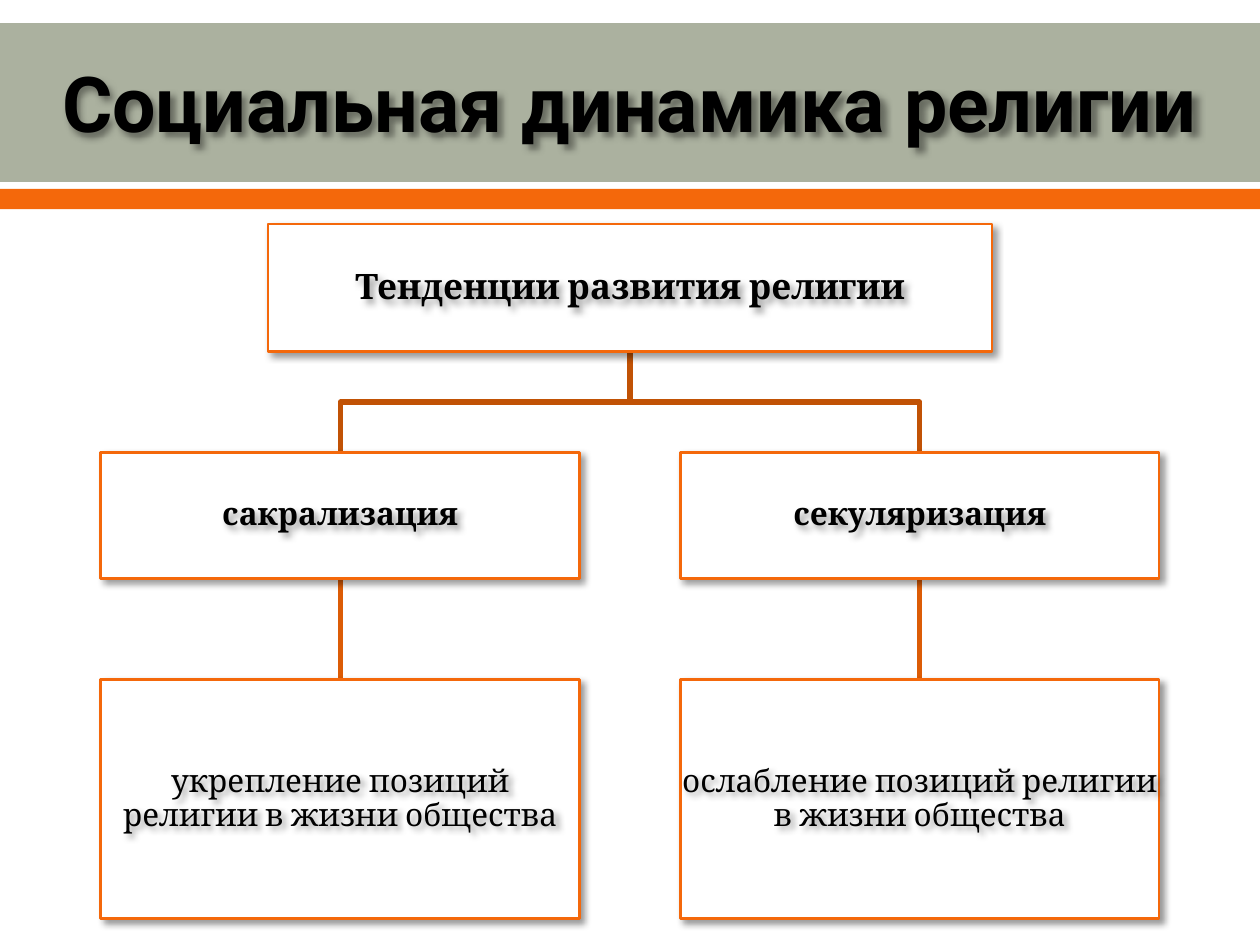
import lxml.etree
import pptx
import pptx.dml.color
import pptx.enum.shapes
import pptx.enum.text
import pptx.oxml.ns
import pptx.util

Pt = pptx.util.Pt
RGBColor = pptx.dml.color.RGBColor
MSO_SHAPE = pptx.enum.shapes.MSO_SHAPE
qn = pptx.oxml.ns.qn

BLACK = RGBColor(0x00, 0x00, 0x00)
WHITE = RGBColor(0xFF, 0xFF, 0xFF)
SAGE = RGBColor(0xAB, 0xB1, 0x9F)
ORANGE = RGBColor(0xF4, 0x68, 0x0B)
UPPER_LINK = RGBColor(0xC1, 0x52, 0x05)
LOWER_LINK = RGBColor(0xDC, 0x5C, 0x06)

PAGE_WIDTH, PAGE_HEIGHT = 720, 540
CENTRE = PAGE_WIDTH / 2
ROOT_WIDTH, ROOT_TOP, ROOT_HEIGHT = 413.6, 128, 73
BRANCH_WIDTH, BRANCH_TOP, BRANCH_HEIGHT = 273.6, 258.6, 72
DETAIL_TOP, DETAIL_HEIGHT = 388.2, 136.8
BRANCH_OFFSET = 165.6
BRANCHES = [
    (CENTRE - BRANCH_OFFSET, "сакрализация",
     "укрепление позиций религии в жизни общества"),
    (CENTRE + BRANCH_OFFSET, "секуляризация",
     "ослабление позиций религии в жизни общества"),
]


class SlideBuilder:
    title_font = "Roboto"
    body_font = "Cambria"
    link_width = 3
    border_width = 1.5

    def __init__(self, page):
        self.page = page
        self.shapes = page.shapes

    def cast_shadow(self, shape):
        """Give the shape a soft shadow towards the lower right."""
        shape.shadow.inherit = False
        effects = shape._element.spPr.find(qn("a:effectLst"))
        outer = lxml.etree.SubElement(
            effects, qn("a:outerShdw"), blurRad=str(Pt(4)), dist=str(Pt(3)),
            dir=str(45 * 60000), algn="tl", rotWithShape="0")
        colour = lxml.etree.SubElement(outer, qn("a:srgbClr"), val=str(BLACK))
        lxml.etree.SubElement(colour, qn("a:alpha"), val="40000")

    def add_text(self, shape, text, font, size, bold, margins, spacing):
        frame = shape.text_frame
        frame.word_wrap = True
        frame.auto_size = pptx.enum.text.MSO_AUTO_SIZE.NONE
        frame.vertical_anchor = pptx.enum.text.MSO_ANCHOR.MIDDLE
        frame.margin_left = frame.margin_right = Pt(margins[0])
        frame.margin_top = frame.margin_bottom = Pt(margins[1])
        para = frame.paragraphs[0]
        para.alignment = pptx.enum.text.PP_ALIGN.CENTER
        para.line_spacing = spacing
        span = para.add_run()
        span.text = text
        span.font.name = font
        span.font.size = Pt(size)
        span.font.bold = bold
        span.font.color.rgb = BLACK

    def rectangle(self, left, top, width, height, fill):
        shape = self.shapes.add_shape(
            MSO_SHAPE.RECTANGLE, Pt(left), Pt(top), Pt(width), Pt(height))
        shape.shadow.inherit = False
        shape.fill.solid()
        shape.fill.fore_color.rgb = fill
        shape.line.fill.background()
        return shape

    def band(self, top, height, fill):
        self.rectangle(0, top, PAGE_WIDTH, height, fill)

    def title(self, text, top, height):
        title = self.shapes.title
        title.left, title.top = Pt(0), Pt(top)
        title.width, title.height = Pt(PAGE_WIDTH), Pt(height)
        self.add_text(title, text, self.title_font, 44, True, (7.2, 3.6), 1.0)
        self.cast_shadow(title)
        # Bring the title in front of the bands
        self.shapes._spTree.append(title._element)

    def box(self, centre, top, width, height, text, size=18, bold=True):
        """Draw a bordered box and a separate label, each with a shadow."""
        left = centre - width / 2
        frame = self.rectangle(left, top, width, height, WHITE)
        frame.line.color.rgb = ORANGE
        frame.line.width = Pt(self.border_width)
        self.cast_shadow(frame)
        label = self.shapes.add_textbox(
            Pt(left), Pt(top), Pt(width), Pt(height))
        self.add_text(label, text, self.body_font, size, bold, (0.9, 0.9), 0.9)
        label.fill.background()
        self.cast_shadow(label)

    def straight_link(self, x, top, bottom):
        link = self.shapes.add_connector(
            pptx.enum.shapes.MSO_CONNECTOR.STRAIGHT,
            Pt(x), Pt(top), Pt(x), Pt(bottom))
        link.line.color.rgb = LOWER_LINK
        link.line.width = Pt(self.link_width)
        lxml.etree.SubElement(link._element.spPr, qn("a:effectLst"))

    def elbow_link(self, start_x, top, end_x, bottom):
        middle = (top + bottom) / 2
        builder = self.shapes.build_freeform(Pt(start_x), Pt(top))
        corners = [(start_x, middle), (end_x, middle), (end_x, bottom)]
        builder.add_line_segments(
            [(Pt(x), Pt(y)) for x, y in corners], close=False)
        link = builder.convert_to_shape()
        link.shadow.inherit = False
        link.fill.background()
        link.line.color.rgb = UPPER_LINK
        link.line.width = Pt(self.link_width)


def main():
    deck = pptx.Presentation()
    deck.slide_width, deck.slide_height = Pt(PAGE_WIDTH), Pt(PAGE_HEIGHT)
    builder = SlideBuilder(deck.slides.add_slide(deck.slide_layouts[5]))

    builder.band(13.2, 90.8, SAGE)
    builder.band(108, 11.5, ORANGE)
    builder.title("Социальная динамика религии", 14.4, 87.8)

    for centre, _, _ in BRANCHES:
        builder.straight_link(centre, BRANCH_TOP + BRANCH_HEIGHT, DETAIL_TOP)
        builder.elbow_link(CENTRE, ROOT_TOP + ROOT_HEIGHT, centre, BRANCH_TOP)

    builder.box(CENTRE, ROOT_TOP, ROOT_WIDTH, ROOT_HEIGHT,
                "Тенденции развития религии", size=20)
    for centre, name, detail in BRANCHES:
        builder.box(centre, BRANCH_TOP, BRANCH_WIDTH, BRANCH_HEIGHT, name)
        builder.box(centre, DETAIL_TOP, BRANCH_WIDTH, DETAIL_HEIGHT, detail,
                    bold=False)

    deck.save("out.pptx")


if __name__ == "__main__":
    main()
